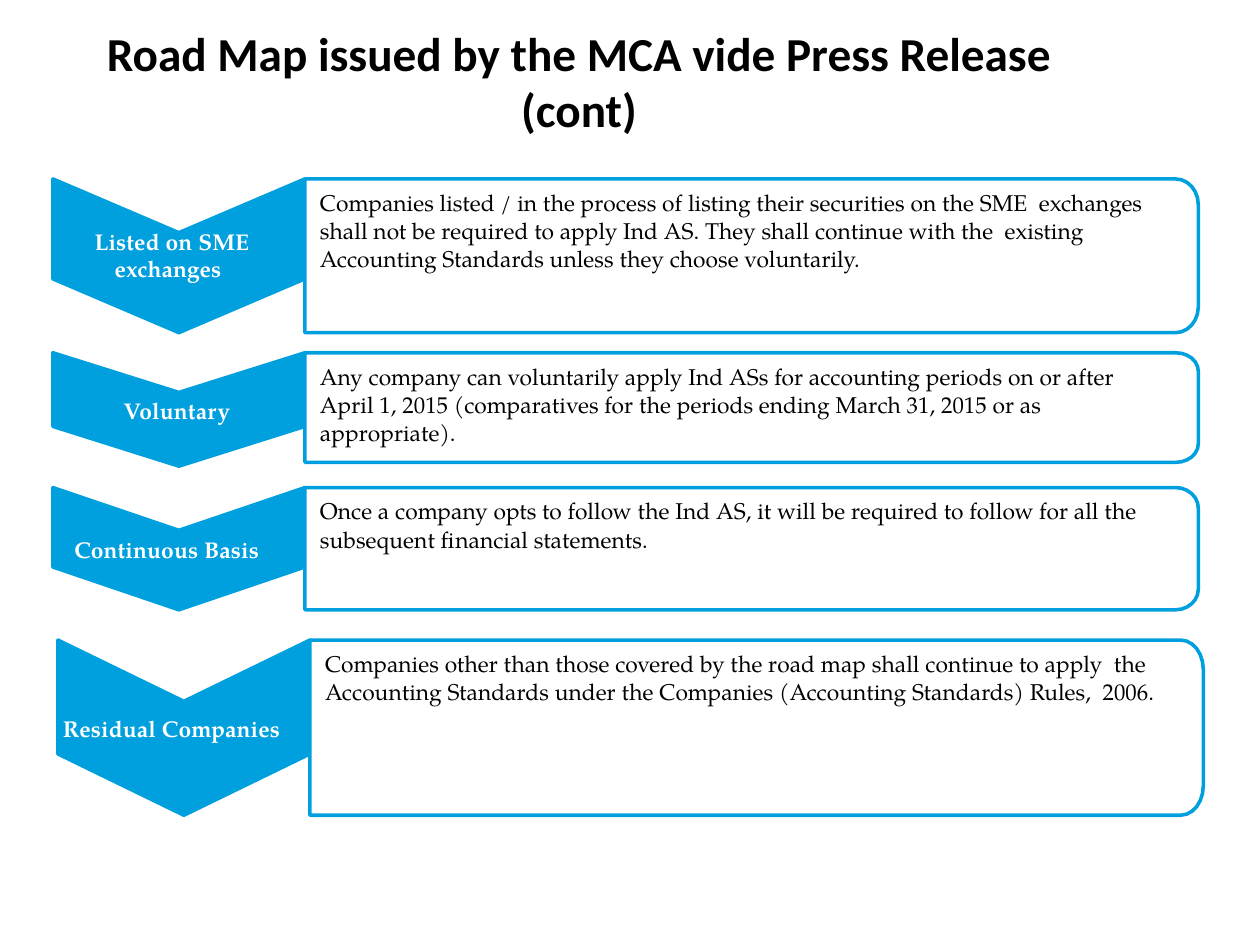
from math import cos, pi, sin

from pptx import Presentation
from pptx.dml.color import RGBColor
from pptx.enum.text import MSO_ANCHOR, PP_ALIGN
from pptx.util import Inches, Pt

CENTER, LEFT = PP_ALIGN.CENTER, PP_ALIGN.LEFT
TOP, MIDDLE = MSO_ANCHOR.TOP, MSO_ANCHOR.MIDDLE
BLUE, WHITE, BLACK = "00A0DE", "FFFFFF", "000000"
HEAD_FONT, BODY_FONT = "Calibri", "TeX Gyre Pagella"
CHEVRON_W, PANEL_W, CORNER_W = 2, 7.09, 0.18
NOTCH = 0.35

TITLE = "Road Map issued by the MCA vide Press Release (cont)"
ROWS = [
    dict(left=0.42, top=1.42, chevron_h=1.22, panel_h=1.22,
         label="Listed on SME exchanges", label_box=(0.74, 1.78, 1.36, 0.46),
         hang=0.16, leading=Pt(15), body_size=(6.66, 0.69),
         body="Companies listed / in the process of listing their securities "
              "on the SME  exchanges shall not be required to apply Ind AS. "
              "They shall continue with the  existing Accounting Standards "
              "unless they choose voluntarily."),
    dict(left=0.42, top=2.8, chevron_h=0.9, panel_h=0.87,
         label="Voluntary", label_box=(0.97, 3.11, 0.9, 0.24),
         body_size=(6.67, 0.69),
         body="Any company can voluntarily apply Ind ASs for accounting "
              "periods on or after April 1, 2015 (comparatives for the "
              "periods ending March 31, 2015 or as appropriate)."),
    dict(left=0.42, top=3.87, chevron_h=0.97, panel_h=0.97,
         label="Continuous Basis", label_box=(0.58, 4.21, 1.67, 0.24),
         body_size=(6.83, 0.46),
         body="Once a company opts to follow the Ind AS, it will be required "
              "to follow for all the subsequent financial statements."),
    dict(left=0.46, top=5.08, chevron_h=1.39, panel_h=1.39,
         label="Residual Companies", label_box=(0.49, 5.63, 1.93, 0.24),
         body_size=(6.86, 0.46),
         body="Companies other than those covered by the road map shall "
              "continue to apply  the Accounting Standards under the "
              "Companies (Accounting Standards) Rules,  2006."),
]


def rgb(value):
    """Turn a hex string into a colour."""
    return RGBColor.from_string(value)


def write(sp, text, size, font, color, bold=False, align=LEFT, anchor=TOP,
          inset=0.02, leading=None, hang=0, tracking=0):
    """Fill a text frame with one formatted paragraph."""
    tf = sp.text_frame
    tf.word_wrap = True
    tf.vertical_anchor = anchor
    tf.margin_left = tf.margin_right = tf.margin_bottom = 0
    tf.margin_top = Inches(inset)
    tf.text = text
    p = tf.paragraphs[0]
    p.alignment = align
    p.line_spacing = leading
    p_pr = p._p.get_or_add_pPr()
    p_pr.set("marL", str(Inches(0.01 + hang)))
    p_pr.set("indent", str(-Inches(hang)))
    r = p.runs[0]
    r.font.name, r.font.size, r.font.bold = font, Pt(size), bold
    r.font.color.rgb = rgb(color)
    r._r.get_or_add_rPr().set("spc", str(tracking))


def add_text(slide, box, text, **style):
    """Add a text box in the body font."""
    sp = slide.shapes.add_textbox(*map(Inches, box))
    write(sp, text, 13, BODY_FONT, **style)


def add_outline(slide, points, fill):
    """Add a closed polygon with a blue border."""
    pts = [(Inches(x), Inches(y)) for x, y in points]
    builder = slide.shapes.build_freeform(*pts[0])
    builder.add_line_segments(pts[1:], close=True)
    sp = builder.convert_to_shape()
    sp.shadow.inherit = False
    sp.fill.solid()
    sp.fill.fore_color.rgb = rgb(fill)
    sp.line.color.rgb = rgb(BLUE)
    sp.line.width = Pt(2.04)


def add_chevron(slide, x, y, h):
    """Add a downward chevron."""
    mid, right = x + CHEVRON_W / 2, x + CHEVRON_W
    notch, shoulder = y + NOTCH * h, y + (1 - NOTCH) * h
    add_outline(slide, [(x, y), (mid, notch), (right, y), (right, shoulder),
                        (mid, y + h), (x, shoulder)], BLUE)


def add_panel(slide, x, y, h):
    """Add a white panel whose right corners are rounded."""
    rx, ry = CORNER_W, h / 6
    cx = x + PANEL_W - rx
    angles = [i * pi / 12 for i in range(7)]
    upper = [(cx + rx * sin(a), y + ry - ry * cos(a)) for a in angles]
    lower = [(px, 2 * y + h - py) for px, py in reversed(upper)]
    add_outline(slide, [(x, y), *upper, *lower, (x, y + h)], WHITE)


def add_row(slide, left, top, chevron_h, panel_h, label, label_box, body,
            body_size, hang=0, leading=None):
    """Add a labelled chevron and its text panel."""
    panel_x = left + CHEVRON_W
    add_chevron(slide, left, top, chevron_h)
    add_text(slide, label_box, label, color=WHITE, bold=True, inset=0.04,
             hang=hang, leading=leading, tracking=10)
    add_panel(slide, panel_x, top, panel_h)
    add_text(slide, (panel_x + 0.11, top + 0.05, *body_size), body,
             color=BLACK, leading=1.03, tracking=6)


def add_title(slide):
    """Place and format the title placeholder."""
    sp = slide.shapes.title
    sp.left, sp.top, sp.width, sp.height = map(Inches, (0.39, 0.17, 8.4, 0.92))
    write(sp, TITLE, 27, HEAD_FONT, BLACK, bold=True, align=CENTER,
          anchor=MIDDLE)


def main():
    """Build the slide."""
    prs = Presentation()
    prs.slide_width, prs.slide_height = Inches(10), Inches(7.5)
    slide = prs.slides.add_slide(prs.slide_layouts[5])
    add_title(slide)
    for row in ROWS:
        add_row(slide, **row)
    prs.save("out.pptx")


if __name__ == "__main__":
    main()
